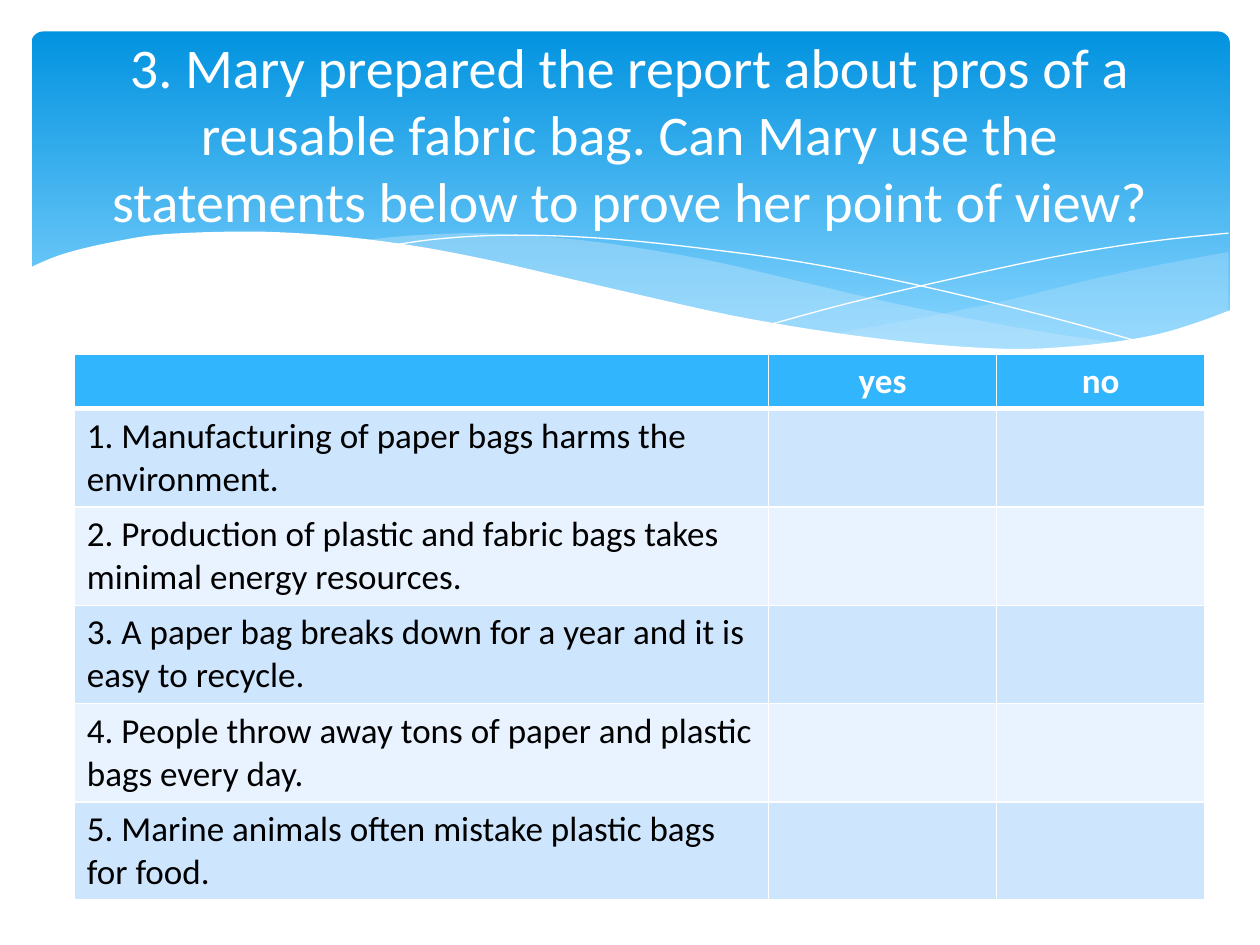
from lxml.etree import SubElement
from pptx import Presentation
from pptx.dml.color import RGBColor
from pptx.enum.shapes import MSO_SHAPE as Shape
from pptx.enum.text import MSO_ANCHOR as Anchor, PP_ALIGN as Align
from pptx.oxml import parse_xml
from pptx.oxml.ns import nsdecls, qn
from pptx.util import Inches, Pt

COLORS = {
    "white": "FFFFFF", "black": "000000", "sky_dark": "0293E0", "sky_light": "83D3FE",
    "haze": "C6E7FC", "header": "31B6FD", "band_odd": "CEE5FE", "band_even": "E8F3FF",
}
FONT = "Calibri"

TITLE = ("3. Mary prepared the report about pros of a reusable fabric bag. "
         "Can Mary use the statements below to prove her point of view?")
HEADERS = ["", "yes", "no"]
STATEMENTS = [
    "1. Manufacturing of paper bags harms the environment.",
    "2. Production of plastic and fabric bags takes minimal energy resources.",
    "3. A paper bag breaks down for a year and it is easy to recycle.",
    "4. People throw away tons of paper and plastic bags every day.",
    "5. Marine animals often mistake plastic bags for food.",
]

# Wave curves, in inches from the banner's top left corner
RIGHT_HAZE_TOP = [(9.5, 1.75), (8.96, 1.85), (8.36, 1.98), (7.8, 2.12), (7.28, 2.23),
                  (6.81, 2.32), (6.36, 2.4)]
RIGHT_HAZE_BOTTOM = [(6.36, 2.4), (6.94, 2.47), (7.44, 2.51), (7.89, 2.53), (8.29, 2.51),
                     (8.64, 2.47), (8.96, 2.4), (9.24, 2.32), (9.5, 2.22)]
LEFT_HAZE_TOP = [(8.68, 2.48), (8.12, 2.4), (7.5, 2.29), (6.81, 2.15), (6.04, 1.97),
                 (5.44, 1.83), (4.89, 1.73), (4.4, 1.66), (3.95, 1.62), (3.55, 1.6),
                 (3.19, 1.61), (2.88, 1.63), (2.61, 1.66)]
LEFT_HAZE_BOTTOM = [(2.61, 1.66), (3.17, 1.74), (3.79, 1.86), (4.24, 1.97), (5.05, 2.15),
                    (5.76, 2.3), (6.4, 2.41), (6.97, 2.49), (7.48, 2.52), (7.93, 2.53),
                    (8.32, 2.52), (8.68, 2.48)]
FALLING_LINE = [(2.84, 1.7), (3.19, 1.65), (3.62, 1.62), (4.08, 1.62), (4.64, 1.65),
                (5.31, 1.72), (6.11, 1.83), (7.02, 2.01), (8.06, 2.26), (8.82, 2.47)]
RISING_LINE = [(5.88, 2.32), (6.47, 2.16), (7.23, 1.98), (8.11, 1.79), (8.85, 1.67),
               (9.5, 1.6)]
WHITE_WAVE = [(9.52, 2.21), (9.25, 2.31), (8.95, 2.4), (8.62, 2.46), (8.25, 2.5),
              (7.84, 2.52), (7.36, 2.5), (6.83, 2.45), (6.23, 2.37), (5.54, 2.25),
              (4.78, 2.08), (4.22, 1.95), (3.66, 1.82), (3.15, 1.72), (2.67, 1.65),
              (2.25, 1.61), (1.86, 1.59), (1.52, 1.59), (1.21, 1.6), (0.94, 1.62),
              (0.7, 1.66), (0.42, 1.72), (0.21, 1.78), (0.04, 1.85), (-0.02, 1.88)]
WAVE_CORNERS = [(-0.02, 3.04), (9.52, 3.04)]


def rgb(name):
    return RGBColor.from_string(COLORS[name])


def smooth(points, steps=4):
    """Return a Catmull-Rom curve through the points."""
    padded = [points[0], *points, points[-1]]
    curve = []
    for a, b, c, d in zip(padded, padded[1:], padded[2:], padded[3:]):
        for step in range(steps):
            t = step / steps
            curve.append(tuple(
                (2 * q + (r - p) * t + (2 * p - 5 * q + 4 * r - s) * t ** 2
                 + (3 * q - p - 3 * r + s) * t ** 3) / 2
                for p, q, r, s in zip(a, b, c, d)))
    return curve + [points[-1]]


def add_outline(page, left, top, points, close):
    placed = [(Inches(left + x), Inches(top + y)) for x, y in points]
    builder = page.shapes.build_freeform(*placed[0])
    builder.add_line_segments(placed[1:], close=close)
    outline = builder.convert_to_shape()
    outline.shadow.inherit = False
    return outline


def add_wave(page, left, top, points, color, opacity=100):
    wave = add_outline(page, left, top, points, True)
    wave.fill.solid()
    wave.fill.fore_color.rgb = rgb(color)
    wave.line.fill.background()
    if opacity < 100:
        tint = wave.fill._xPr.find(qn("a:solidFill"))[0]
        SubElement(tint, qn("a:alpha")).set("val", str(opacity * 1000))


def add_thin_line(page, left, top, points):
    line = add_outline(page, left, top, smooth(points), False)
    line.fill.background()
    line.line.color.rgb = rgb("white")
    line.line.width = Pt(0)


def add_banner(page, left, top, width, height):
    sky = page.shapes.add_shape(Shape.ROUNDED_RECTANGLE, Inches(left), Inches(top),
                                Inches(width), Inches(height))
    sky.adjustments[0] = 0.034
    sky.shadow.inherit = False
    sky.line.fill.background()
    sky.fill.gradient()
    sky.fill.gradient_angle = 270
    stops = zip(sky.fill.gradient_stops, [0, 0.9], ["sky_dark", "sky_light"])
    for stop, position, color in stops:
        stop.position = position
        stop.color.rgb = rgb(color)

    add_wave(page, left, top, smooth(RIGHT_HAZE_TOP) + smooth(RIGHT_HAZE_BOTTOM), "haze", 29)
    add_wave(page, left, top, smooth(LEFT_HAZE_TOP) + smooth(LEFT_HAZE_BOTTOM), "haze", 40)
    add_thin_line(page, left, top, FALLING_LINE)
    add_thin_line(page, left, top, RISING_LINE)
    add_wave(page, left, top, smooth(WHITE_WAVE) + WAVE_CORNERS, "white")


def add_title(page, left, top, width, height):
    box = page.shapes.add_textbox(Inches(left), Inches(top), Inches(width), Inches(height))
    frame = box.text_frame
    frame.word_wrap = True
    frame.vertical_anchor = Anchor.MIDDLE
    frame.text = TITLE
    style_paragraph(frame.paragraphs[0], 32, "white", Align.CENTER)


def style_paragraph(para, size, color, align, bold=False):
    para.alignment = align
    para.font.name = FONT
    para.font.size = Pt(size)
    para.font.bold = bold
    para.font.color.rgb = rgb(color)


def set_borders(cell, **widths):
    """Draw white borders; widths are in points, keyed by side in schema order."""
    properties = cell._tc.get_or_add_tcPr()
    for index, (side, width) in enumerate(widths.items()):
        properties.insert(index, parse_xml(
            f'<a:ln{side} {nsdecls("a")} w="{Pt(width)}"><a:solidFill>'
            f'<a:srgbClr val="{COLORS["white"]}"/></a:solidFill></a:ln{side}>'))


def add_answer_table(page, left, top, column_widths, header_height, row_height):
    rows = [HEADERS] + [[statement, "", ""] for statement in STATEMENTS]
    heights = [header_height] + [row_height] * len(STATEMENTS)
    table = page.shapes.add_table(
        len(rows), len(column_widths), Inches(left), Inches(top),
        Inches(sum(column_widths)), Inches(sum(heights))).table
    for column, width in zip(table.columns, column_widths):
        column.width = Inches(width)
    for r, (texts, height) in enumerate(zip(rows, heights)):
        table.rows[r].height = Inches(height)
        is_header = r == 0
        fill = "header" if is_header else "band_odd" if r % 2 else "band_even"
        for c, text in enumerate(texts):
            cell = table.cell(r, c)
            set_borders(cell, L=1, R=1, T=3 if r == 1 else 1, B=3 if is_header else 1)
            cell.fill.solid()
            cell.fill.fore_color.rgb = rgb(fill)
            cell.text = text
            style_paragraph(cell.text_frame.paragraphs[0], 20,
                            "white" if is_header else "black",
                            Align.CENTER if is_header else Align.LEFT, is_header)


def main():
    deck = Presentation()
    deck.slide_width, deck.slide_height = Inches(10), Inches(7.5)
    page = deck.slides.add_slide(deck.slide_layouts[6])
    add_banner(page, 0.25, 0.25, 9.51, 2.7)
    add_title(page, 0.5, 0.37, 9, 1.37)
    add_answer_table(page, 0.59, 2.81, [5.51, 1.81, 1.65], 0.43, 0.78)
    deck.save("out.pptx")


if __name__ == "__main__":
    main()
